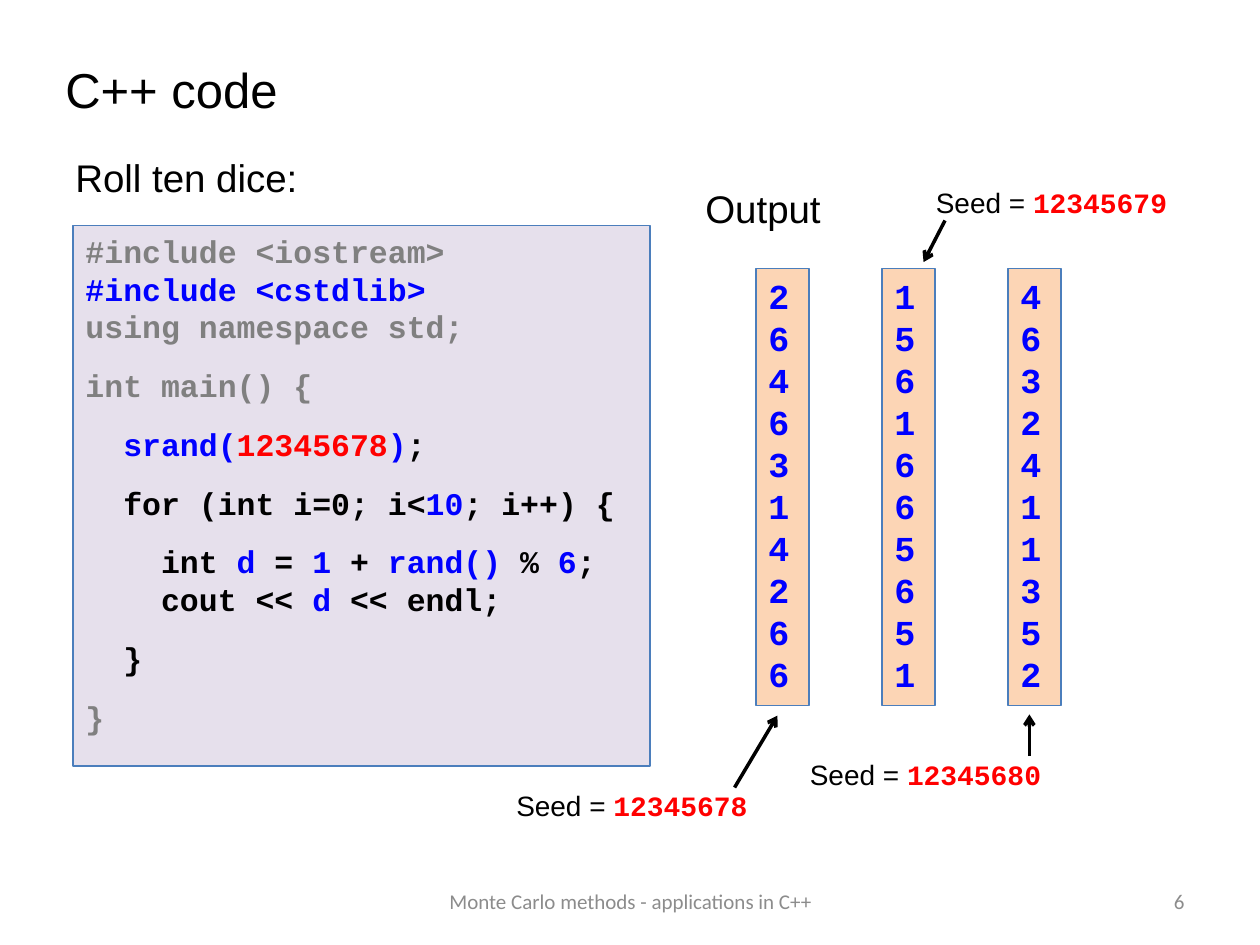
from typing import NamedTuple

from lxml import etree
from pptx import Presentation
from pptx.dml.color import RGBColor
from pptx.enum.shapes import MSO_CONNECTOR, MSO_SHAPE
from pptx.enum.text import MSO_ANCHOR, PP_ALIGN
from pptx.oxml.ns import qn
from pptx.util import Inches, Pt

RECTANGLE = MSO_SHAPE.RECTANGLE
STRAIGHT = MSO_CONNECTOR.STRAIGHT
TOP, MIDDLE = MSO_ANCHOR.TOP, MSO_ANCHOR.MIDDLE
LEFT, CENTER, RIGHT = PP_ALIGN.LEFT, PP_ALIGN.CENTER, PP_ALIGN.RIGHT

SANS, MONO, FOOTER_FONT = "Arial", "Courier New", "Calibri"
BLACK, BLUE, RED, GRAY = "000000", "0000FF", "FF0000", "808080"
FOOTER_GRAY, LAVENDER, PEACH, OUTLINE = "8C8C8C", "E6E0EC", "FCD5B5", "4B7EBC"
INDENT_STEP = 0.3  # two characters of code
BLOCK_GAP = 12


class Run(NamedTuple):
    text: str
    color: str = BLACK
    font: str = SANS
    size: float = 16
    bold: bool = False


class Label(NamedTuple):
    left: float
    top: float
    width: float
    height: float
    runs: list[Run]
    align: PP_ALIGN = LEFT
    anchor: MSO_ANCHOR = TOP


class CodeLine(NamedTuple):
    segments: list[tuple[str, str]]
    level: int = 0
    gap: bool = False


class SeedOutput(NamedTuple):
    seed: str
    rolls: str
    column_left: float
    label_left: float
    label_top: float
    arrow_start: tuple[float, float]
    arrow_end: tuple[float, float]


CODE = [
    CodeLine([("#include <iostream>", GRAY)]),
    CodeLine([("#include <cstdlib>", BLUE)]),
    CodeLine([("using namespace std;", GRAY)]),
    CodeLine([("int main() {", GRAY)], gap=True),
    CodeLine([("srand(", BLUE), ("12345678", RED), (")", BLUE), (";", BLACK)], 1, True),
    CodeLine([("for (int i=0; i<", BLACK), ("10", BLUE), ("; i++) {", BLACK)], 1, True),
    CodeLine([("int ", BLACK), ("d", BLUE), (" = ", BLACK), ("1", BLUE), (" + ", BLACK),
              ("rand() ", BLUE), ("% ", BLACK), ("6", BLUE), (";", BLACK)], 2, True),
    CodeLine([("cout << ", BLACK), ("d", BLUE), (" << endl;", BLACK)], 2),
    CodeLine([("}", BLACK)], 1, True),
    CodeLine([("}", GRAY)], gap=True),
]

OUTPUTS = [
    SeedOutput("12345678", "2646314266", 6, 4, 6.21, (5.83, 6.25), (6.17, 5.68)),
    SeedOutput("12345679", "1561665651", 7, 7.33, 1.42, (7.5, 1.75), (7.33, 2.08)),
    SeedOutput("12345680", "4632411352", 8, 6.33, 5.96, (8.17, 6), (8.17, 5.67)),
]

LABELS = [
    Label(0.42, 0.42, 1.92, 0.57, [Run("C++ code", size=28)]),
    Label(0.5, 1.17, 2.33, 0.47, [Run("Roll ten dice:", size=22)]),
    Label(5.5, 1.42, 1.17, 0.47, [Run("Output", size=22)]),
    Label(3.42, 6.95, 3.17, 0.4,
          [Run("Monte Carlo methods - applications in C++", FOOTER_GRAY, FOOTER_FONT, 12)],
          CENTER, MIDDLE),
    Label(7.17, 6.95, 2.33, 0.4, [Run("6", FOOTER_GRAY, FOOTER_FONT, 12)], RIGHT, MIDDLE),
]


def rgb(color: str) -> RGBColor:
    return RGBColor.from_string(color)


def add_runs(paragraph, runs: list[Run], align: PP_ALIGN = LEFT) -> None:
    paragraph.alignment = align
    for item in runs:
        run = paragraph.add_run()
        run.text = item.text
        run.font.name = item.font
        run.font.size = Pt(item.size)
        run.font.bold = item.bold
        run.font.color.rgb = rgb(item.color)


def next_paragraph(text_frame, index: int):
    return text_frame.paragraphs[0] if index == 0 else text_frame.add_paragraph()


def add_label(slide, label: Label) -> None:
    box = slide.shapes.add_textbox(Inches(label.left), Inches(label.top),
                                   Inches(label.width), Inches(label.height))
    text_frame = box.text_frame
    text_frame.word_wrap = True
    text_frame.vertical_anchor = label.anchor
    add_runs(text_frame.paragraphs[0], label.runs, label.align)


def add_panel(slide, left: float, top: float, width: float, height: float,
              fill: str, lines: list[CodeLine], size: float) -> None:
    shape = slide.shapes.add_shape(RECTANGLE, Inches(left), Inches(top),
                                   Inches(width), Inches(height))
    shape.shadow.inherit = False
    shape.fill.solid()
    shape.fill.fore_color.rgb = rgb(fill)
    shape.line.color.rgb = rgb(OUTLINE)
    shape.line.width = Pt(0.75)
    text_frame = shape.text_frame
    text_frame.word_wrap = True
    text_frame.vertical_anchor = TOP
    for index, line in enumerate(lines):
        paragraph = next_paragraph(text_frame, index)
        add_runs(paragraph, [Run(text, color, MONO, size, True) for text, color in line.segments])
        if line.gap:
            paragraph.space_before = Pt(BLOCK_GAP)
        if line.level:
            properties = paragraph._p.get_or_add_pPr()
            properties.set("marL", str(Inches(line.level * INDENT_STEP)))
            properties.set("indent", "0")


def add_arrow(slide, start: tuple[float, float], end: tuple[float, float]) -> None:
    connector = slide.shapes.add_connector(STRAIGHT, *map(Inches, start + end))
    connector.line.color.rgb = rgb(BLACK)
    connector.line.width = Pt(2)
    properties = connector._element.spPr
    etree.SubElement(properties.find(qn("a:ln")), qn("a:tailEnd"), type="arrow")
    etree.SubElement(properties, qn("a:effectLst"))


def add_output(slide, output: SeedOutput) -> None:
    digits = [CodeLine([(roll, BLUE)]) for roll in output.rolls]
    add_panel(slide, output.column_left, 2.13, 0.42, 3.47, PEACH, digits, 20)
    add_label(slide, Label(output.label_left, output.label_top, 2.17, 0.37,
                           [Run("Seed = "), Run(output.seed, RED, MONO, bold=True)]))
    add_arrow(slide, output.arrow_start, output.arrow_end)


def main() -> None:
    presentation = Presentation()
    presentation.slide_width = Inches(10)
    presentation.slide_height = Inches(7.5)
    slide = presentation.slides.add_slide(presentation.slide_layouts[6])

    # Title, headings and footer
    for label in LABELS:
        add_label(slide, label)

    # Program listing
    add_panel(slide, 0.58, 1.79, 4.58, 4.29, LAVENDER, CODE, 18)

    # Dice rolls for each seed
    for output in OUTPUTS:
        add_output(slide, output)

    presentation.save("out.pptx")


if __name__ == "__main__":
    main()
